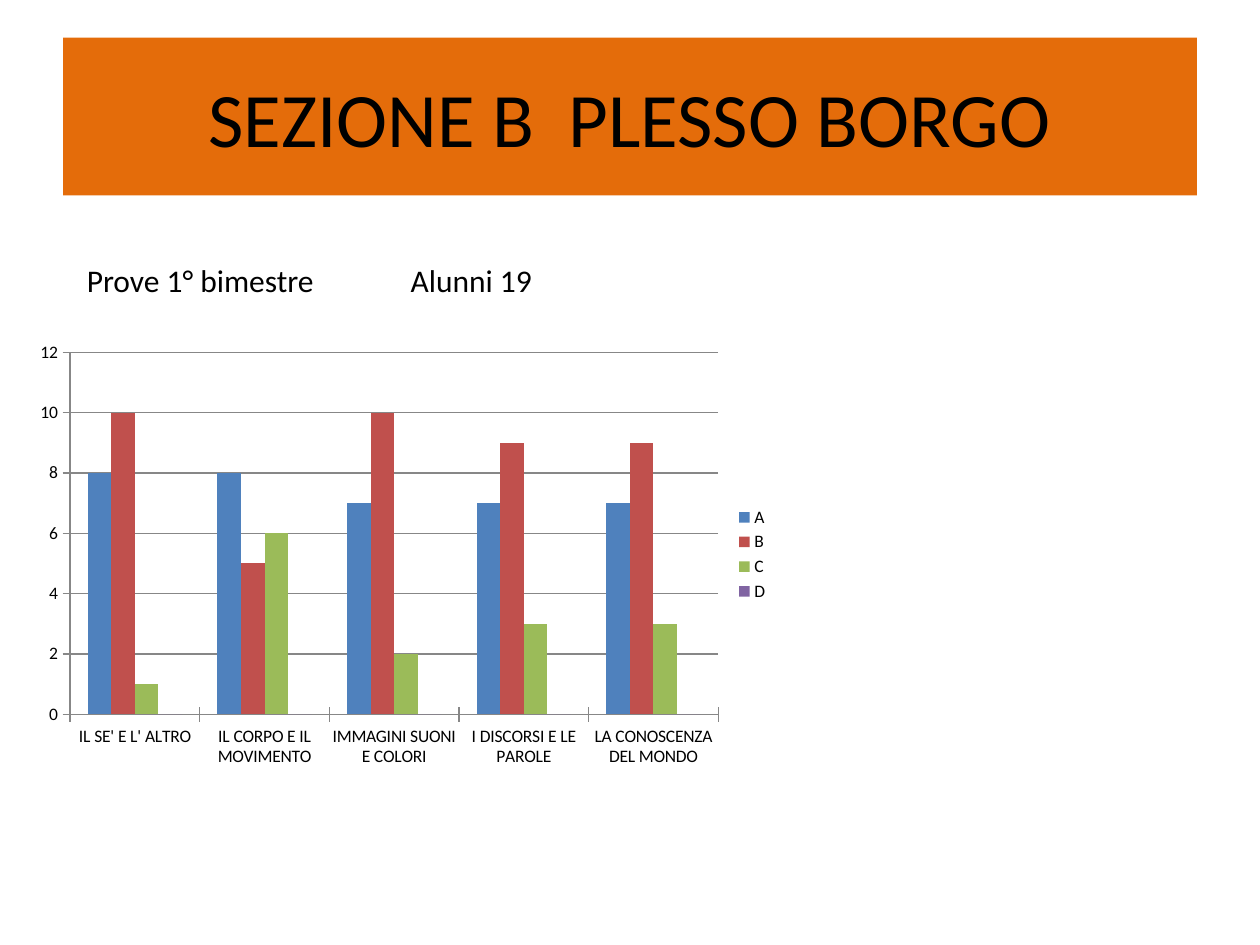
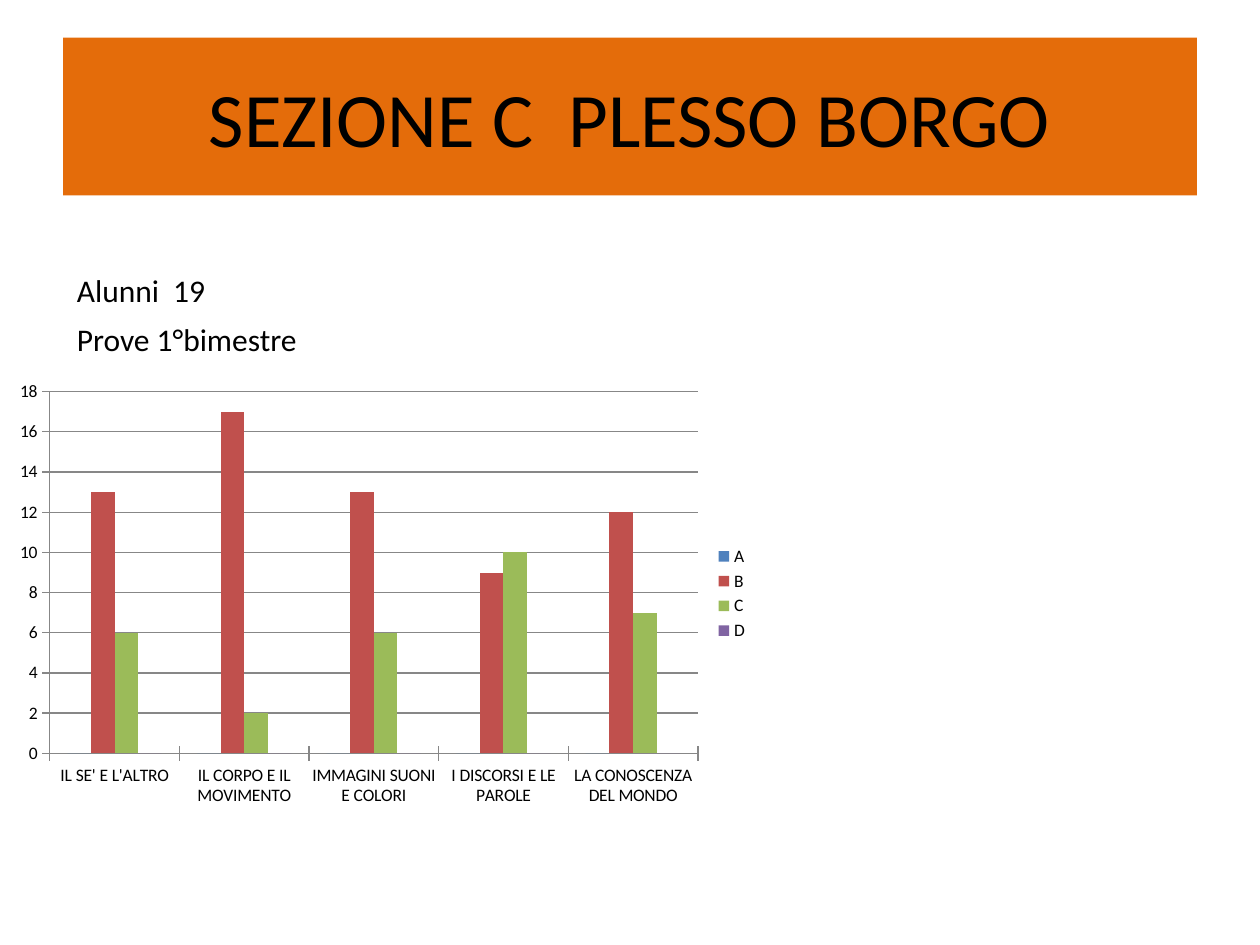
from dataclasses import dataclass

from pptx import Presentation
from pptx.chart.data import CategoryChartData
from pptx.dml.color import RGBColor
from pptx.enum.chart import XL_CHART_TYPE as ChartType
from pptx.enum.chart import XL_LEGEND_POSITION as LegendPosition
from pptx.enum.chart import XL_TICK_MARK as TickMark
from pptx.enum.text import MSO_ANCHOR as Anchor
from pptx.enum.text import MSO_AUTO_SIZE as AutoSize
from pptx.enum.text import PP_ALIGN as Align
from pptx.slide import Slide
from pptx.text.text import TextFrame
from pptx.util import Cm, Pt

FONT = "Calibri"
BLACK = RGBColor(0x00, 0x00, 0x00)
ORANGE = RGBColor(0xE4, 0x6C, 0x0A)
GRAY = RGBColor(0x87, 0x87, 0x87)
GRADE_COLORS = {
    "A": RGBColor(0x4F, 0x81, 0xBD),
    "B": RGBColor(0xC0, 0x50, 0x4D),
    "C": RGBColor(0x9B, 0xBB, 0x59),
    "D": RGBColor(0x80, 0x64, 0xA2),
}
SHARED_FIELDS = (
    "IL CORPO E IL MOVIMENTO",
    "IMMAGINI SUONI E COLORI",
    "I DISCORSI E LE PAROLE",
    "LA CONOSCENZA DEL MONDO",
)
NO_PUPILS = (0, 0, 0, 0, 0)


@dataclass(frozen=True)
class Label:
    text: str
    left: float
    top: float
    width: float


@dataclass(frozen=True)
class Section:
    title: str
    labels: tuple[Label, ...]
    chart_left: float
    chart_top: float
    first_field: str
    grades: tuple[tuple[int, ...], ...]


SECTIONS = (
    Section(
        "SEZIONE B  PLESSO BORGO",
        (
            Label("Prove 1° bimestre", 1.5, 5.13, 5.13),
            Label("Alunni 19", 8.03, 5.13, 3.0),
        ),
        0.51,
        6.73,
        "IL SE' E L' ALTRO",
        ((8, 8, 7, 7, 7), (10, 5, 10, 9, 9), (1, 6, 2, 3, 3), NO_PUPILS),
    ),
    Section(
        "SEZIONE C  PLESSO BORGO",
        (
            Label("Prove 1°bimestre", 1.3, 6.32, 5.0),
            Label("Alunni  19", 1.3, 5.33, 3.12),
        ),
        0.1,
        7.52,
        "IL SE' E L'ALTRO",
        (NO_PUPILS, (13, 17, 13, 9, 12), (6, 2, 6, 10, 7), NO_PUPILS),
    ),
)


def write_text(frame: TextFrame, text: str, size: int, alignment: Align) -> None:
    paragraph = frame.paragraphs[0]
    paragraph.alignment = alignment
    run = paragraph.add_run()
    run.text = text
    run.font.name = FONT
    run.font.size = Pt(size)
    run.font.color.rgb = BLACK


def format_title(slide: Slide, text: str) -> None:
    title = slide.shapes.title
    title.left, title.top = Cm(1.27), Cm(0.76)
    title.width, title.height = Cm(22.86), Cm(3.18)
    title.fill.solid()
    title.fill.fore_color.rgb = ORANGE
    title.text_frame.vertical_anchor = Anchor.MIDDLE
    write_text(title.text_frame, text, 44, Align.CENTER)


def add_label(slide: Slide, label: Label) -> None:
    box = slide.shapes.add_textbox(
        Cm(label.left), Cm(label.top), Cm(label.width), Cm(1.02)
    )
    box.text_frame.word_wrap = False
    box.text_frame.auto_size = AutoSize.SHAPE_TO_FIT_TEXT
    write_text(box.text_frame, label.text, 18, Align.LEFT)


def add_grade_chart(slide: Slide, section: Section) -> None:
    data = CategoryChartData()
    data.categories = (section.first_field, *SHARED_FIELDS)
    for grade, counts in zip(GRADE_COLORS, section.grades):
        data.add_series(grade, counts)

    chart = slide.shapes.add_chart(
        ChartType.COLUMN_CLUSTERED,
        Cm(section.chart_left),
        Cm(section.chart_top),
        Cm(15.24),
        Cm(8.89),
        data,
    ).chart
    chart.has_title = False
    chart.font.name = FONT
    chart.font.size = Pt(10)
    chart.font.color.rgb = BLACK
    chart.has_legend = True
    chart.legend.position = LegendPosition.RIGHT
    chart.legend.include_in_layout = False

    for axis in (chart.category_axis, chart.value_axis):
        axis.major_tick_mark = TickMark.CROSS
        axis.minor_tick_mark = TickMark.NONE
        axis.format.line.color.rgb = GRAY
    chart.value_axis.has_major_gridlines = True
    chart.value_axis.major_gridlines.format.line.color.rgb = GRAY

    plot = chart.plots[0]
    plot.gap_width = 150
    plot.overlap = 0
    plot.vary_by_categories = False
    for series, color in zip(plot.series, GRADE_COLORS.values()):
        series.format.fill.solid()
        series.format.fill.fore_color.rgb = color


def main() -> None:
    presentation = Presentation()
    presentation.slide_width = Cm(25.4)
    presentation.slide_height = Cm(19.05)
    title_only = presentation.slide_layouts.get_by_name("Title Only")
    for section in SECTIONS:
        slide = presentation.slides.add_slide(title_only)
        format_title(slide, section.title)
        add_grade_chart(slide, section)
        for label in section.labels:
            add_label(slide, label)
    presentation.save("out.pptx")


if __name__ == "__main__":
    main()
